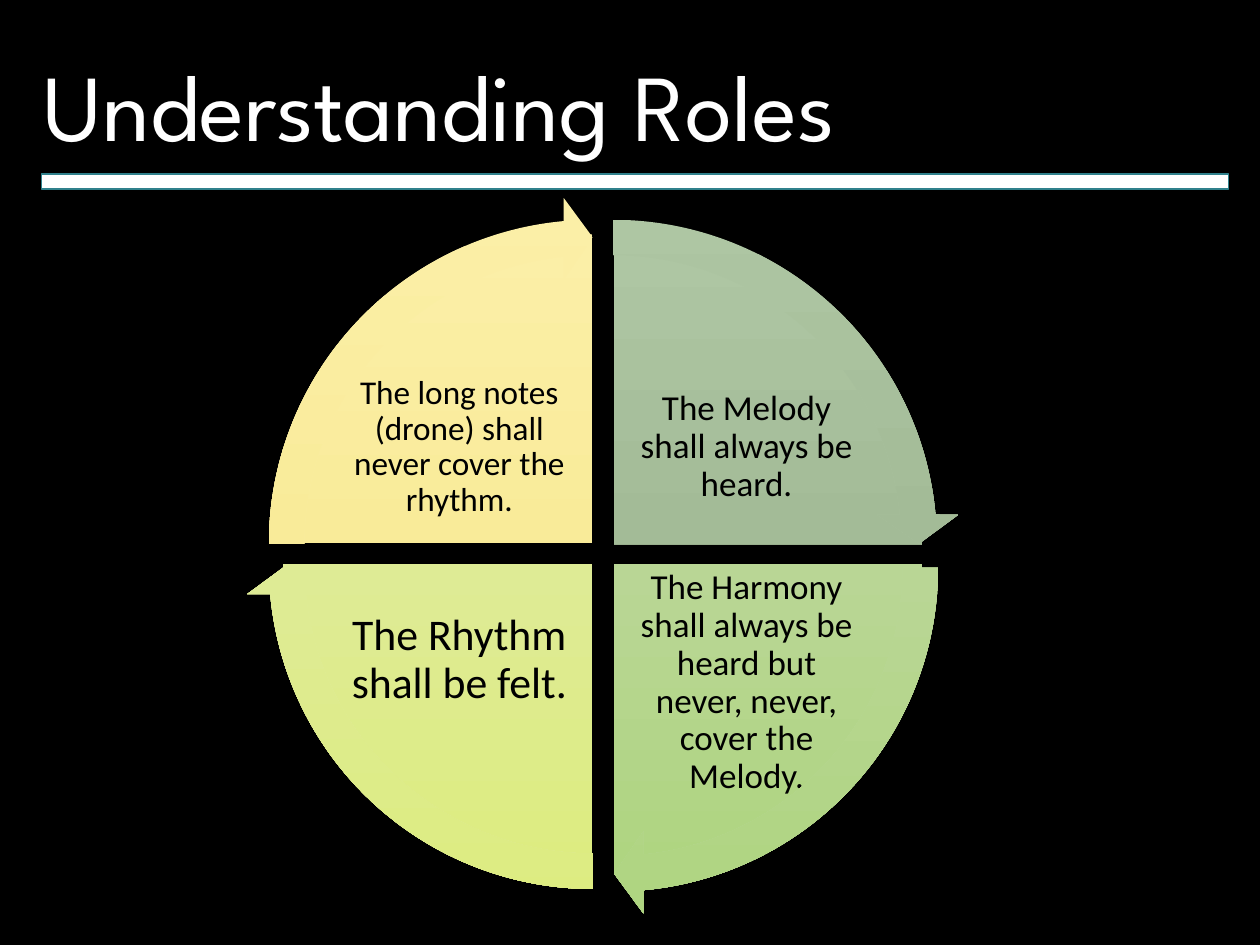
"""Build the Understanding Roles slide: a four-part cycle of ensemble rules."""
from copy import deepcopy
from dataclasses import dataclass

from pptx import Presentation
from pptx.dml.color import RGBColor
from pptx.enum.shapes import MSO_SHAPE
from pptx.enum.text import MSO_ANCHOR, PP_ALIGN
from pptx.oxml.ns import qn
from pptx.shapes.autoshape import Shape
from pptx.slide import Slide
from pptx.util import Inches, Pt

COLORS = {"background": "000000", "title": "FFFFFF", "bar": "FFFFFF", "bar_line": "30818C", "rule": "000000"}
GRADIENTS = {
    "melody": ("AEC6A3", "A3BB97", "94B384"),
    "harmony": ("C3DFA2", "B9D695", "AFD581"),
    "rhythm": ("E3EFA4", "DEEB95", "DDEC81"),
    "drone": ("FBEFA7", "F9EB99", "FDEB85"),
}
FULL_TURN = 216
QUARTER_TURN = FULL_TURN / 4
ARROW_HEAD = 3.275
PIE_SIZE = 4.9
ARROW_SIZE = 5.51
INSET = 0.03


@dataclass(frozen=True)
class Role:
    name: str
    rule: str
    size: int
    pie: tuple[float, float]
    arrow: tuple[float, float]
    label: tuple[float, float]
    top_inset: float = INSET


ROLES = [
    Role("melody", "The Melody shall always be heard.", 20, (2.42, 1.87), (2.11, 1.56), (5.02, 2.88)),
    Role("harmony", "The Harmony shall always be heard but never, never, cover the Melody.", 20,
         (2.42, 2.03), (2.12, 1.75), (5.02, 4.57), 0.39),
    Role("rhythm", "The Rhythm shall be felt.", 25, (2.25, 2.03), (1.95, 1.73), (2.74, 4.57)),
    Role("drone", "The long notes (drone) shall never cover the rhythm.", 19,
         (2.25, 1.86), (1.95, 1.56), (2.74, 2.88)),
]


def rgb(name: str) -> RGBColor:
    """Return a named colour."""
    return RGBColor.from_string(COLORS[name])


def add_shape(page: Slide, kind: MSO_SHAPE, left: float, top: float, width: float, height: float) -> Shape:
    """Add a preset shape without a shadow."""
    shape = page.shapes.add_shape(kind, Inches(left), Inches(top), Inches(width), Inches(height))
    shape.shadow.inherit = False
    return shape


def fill_gradient(shape: Shape, colors: tuple[str, ...]) -> None:
    """Fill a shape from top to bottom with three evenly placed colours."""
    shape.fill.gradient()
    shape.fill.gradient_angle = 270
    stop_list = shape.element.spPr.find(".//" + qn("a:gsLst"))
    stop_list.insert(1, deepcopy(stop_list[0]))
    for index, (stop, color) in enumerate(zip(shape.fill.gradient_stops, colors)):
        stop.position = index / 2
        stop.color.rgb = RGBColor.from_string(color)


def add_sector(page: Slide, kind: MSO_SHAPE, place: tuple[float, float], size: float,
               adjustments: list[float], colors: tuple[str, ...]) -> None:
    """Add a square, unlined part of the cycle."""
    sector = add_shape(page, kind, *place, size, size)
    for index, value in enumerate(adjustments):
        sector.adjustments[index] = value
    fill_gradient(sector, colors)
    sector.line.fill.background()


def add_text(page: Slide, text: str, place: tuple[float, float], extent: tuple[float, float],
             font: str, size: int, color: str, align: PP_ALIGN) -> Shape:
    """Add a wrapped, vertically centred line of text."""
    box = page.shapes.add_textbox(*(Inches(length) for length in place + extent))
    box.text_frame.word_wrap = True
    box.text_frame.vertical_anchor = MSO_ANCHOR.MIDDLE
    para = box.text_frame.paragraphs[0]
    para.text = text
    para.alignment = align
    para.line_spacing = 0.9
    para.font.name = font
    para.font.size = Pt(size)
    para.font.color.rgb = rgb(color)
    return box


def add_label(page: Slide, role: Role) -> None:
    """Write the rule of a role on its sector."""
    box = add_text(page, role.rule, role.label, (1.81, 1.34), "Calibri", role.size, "rule", PP_ALIGN.CENTER)
    frame = box.text_frame
    frame.margin_left = frame.margin_right = frame.margin_bottom = Inches(INSET)
    frame.margin_top = Inches(role.top_inset)


def add_cycle(page: Slide) -> None:
    """Draw the sectors clockwise from the top, then the arrows over them."""
    starts = [(3 + index) % 4 * QUARTER_TURN for index in range(len(ROLES))]
    for role, start in zip(ROLES, starts):
        end = (start + QUARTER_TURN) % FULL_TURN
        add_sector(page, MSO_SHAPE.PIE, role.pie, PIE_SIZE, [start, end], GRADIENTS[role.name])
        add_label(page, role)
    for role, start in zip(ROLES, starts):
        tip = start + QUARTER_TURN - ARROW_HEAD
        add_sector(page, MSO_SHAPE.CIRCULAR_ARROW, role.arrow, ARROW_SIZE,
                   [0.051, ARROW_HEAD, tip, start, 0.059], GRADIENTS[role.name])


def main() -> None:
    """Build and save the deck."""
    deck = Presentation()
    deck.slide_width, deck.slide_height = Inches(10), Inches(7.5)
    page = deck.slides.add_slide(deck.slide_layouts[6])
    page.background.fill.solid()
    page.background.fill.fore_color.rgb = rgb("background")
    add_text(page, "Understanding Roles", (0.25, 0.17), (9.5, 1.42), "League Spartan", 54, "title", PP_ALIGN.LEFT)
    add_cycle(page)
    bar = add_shape(page, MSO_SHAPE.RECTANGLE, 0.33, 1.38, 9.42, 0.12)
    bar.fill.solid()
    bar.fill.fore_color.rgb = rgb("bar")
    bar.line.color.rgb = rgb("bar_line")
    bar.line.width = Pt(1)
    deck.save("out.pptx")


if __name__ == "__main__":
    main()
